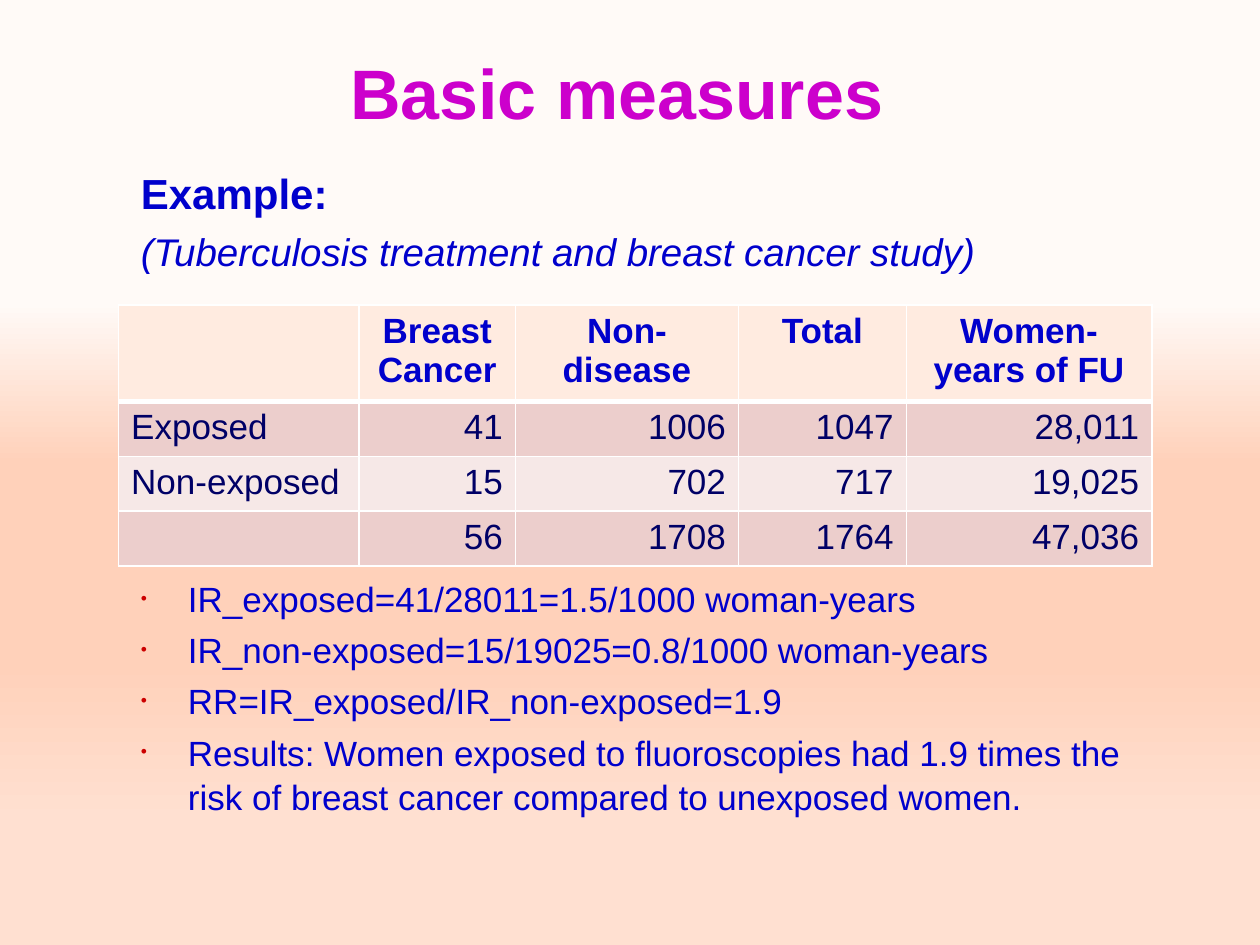
import pptx
import pptx.dml.color
import pptx.enum.text
import pptx.oxml
import pptx.oxml.ns
import pptx.util
from lxml import etree

Cm = pptx.util.Cm
Pt = pptx.util.Pt
ALIGN = pptx.enum.text.PP_ALIGN
qn = pptx.oxml.ns.qn

TITLE = "Basic measures"
INTRO = ["Example:", "(Tuberculosis treatment and breast cancer study)"]
HEADER = ["", "Breast Cancer", "Non-disease", "Total", "Women-years of FU"]
ROWS = [
    ["Exposed", "41", "1006", "1047", "28,011"],
    ["Non-exposed", "15", "702", "717", "19,025"],
    ["", "56", "1708", "1764", "47,036"],
]
FINDINGS = [
    "IR_exposed=41/28011=1.5/1000 woman-years",
    "IR_non-exposed=15/19025=0.8/1000 woman-years",
    "RR=IR_exposed/IR_non-exposed=1.9",
    "Results: Women exposed to fluoroscopies had 1.9 times the risk of "
    "breast cancer compared to unexposed women.",
]
COLUMN_WIDTHS = [4.85, 3.15, 4.5, 3.38, 4.95]
HEADER_HEIGHT, ROW_HEIGHT = 1.82, 1.04

THEME = {
    "font": "Arial",
    "title": ("CC00CC", 40),
    "example": ("0000CC", 24),
    "study": ("0000CC", 22),
    "body": ("0000CC", 20),
    "figures": ("000066", 20),
    "bullet": "CC0000",
    "border": "FFFFFF",
    "header_fill": "FFEBE0",
    "row_fills": ["ECCECC", "F6E8E7"],
    "background": [(32, "FFFAF7"), (49, "FFD1BA"), (70, "FFD1BA"), (87, "FFE0D1")],
}


def rgb(value):
    return pptx.dml.color.RGBColor.from_string(value)


def style(para, role, bold=False, italic=False, align=ALIGN.LEFT):
    color, size = THEME[role]
    para.alignment = align
    for font in [para.font] + [span.font for span in para.runs]:
        font.name = THEME["font"]
        font.size = Pt(size)
        font.bold = bold
        font.italic = italic
        font.color.rgb = rgb(color)


def add_text(page, lines, left, top, width, height):
    box = page.shapes.add_textbox(Cm(left), Cm(top), Cm(width), Cm(height))
    box.text_frame.word_wrap = True
    box.text_frame.text = "\n".join(lines)
    return box.text_frame


def space(paras, before):
    for index, para in enumerate(paras):
        para.line_spacing = 1.05
        para.space_before = Pt(before if index else 0)


def add_bullet(para):
    properties = para._p.get_or_add_pPr()
    properties.set("marL", str(Cm(0.95)))
    properties.set("indent", str(Cm(-0.95)))
    color = etree.SubElement(properties, qn("a:buClr"))
    etree.SubElement(color, qn("a:srgbClr"), val=THEME["bullet"])
    etree.SubElement(properties, qn("a:buSzPct"), val="50000")
    etree.SubElement(properties, qn("a:buFont"), typeface=THEME["font"])
    etree.SubElement(properties, qn("a:buChar"), char="•")


def add_borders(cell, top, bottom):
    properties = cell._tc.get_or_add_tcPr()
    for index, (side, width) in enumerate(zip("LRTB", (1, 1, top, bottom))):
        line = etree.Element(qn("a:ln" + side), w=str(Pt(width)))
        fill = etree.SubElement(line, qn("a:solidFill"))
        etree.SubElement(fill, qn("a:srgbClr"), val=THEME["border"])
        properties.insert(index, line)


def paint_background(page):
    fill = page.background.fill
    fill.gradient()
    fill.gradient_angle = 270
    stops = next(page._element.iter(qn("a:gsLst")))
    for stop in list(stops):
        stops.remove(stop)
    for position, color in THEME["background"]:
        stop = etree.SubElement(stops, qn("a:gs"), pos=str(position * 1000))
        etree.SubElement(stop, qn("a:srgbClr"), val=color)


def add_counts(page):
    rows = [HEADER] + ROWS
    height = HEADER_HEIGHT + ROW_HEIGHT * len(ROWS)
    table = page.shapes.add_table(
        len(rows), len(HEADER), Cm(2.39), Cm(6.15), Cm(sum(COLUMN_WIDTHS)), Cm(height)
    ).table
    for column, width in zip(table.columns, COLUMN_WIDTHS):
        column.width = Cm(width)
    for r, values in enumerate(rows):
        is_header = r == 0
        table.rows[r].height = Cm(HEADER_HEIGHT if is_header else ROW_HEIGHT)
        fill = THEME["header_fill"] if is_header else THEME["row_fills"][(r - 1) % 2]
        for c, value in enumerate(values):
            cell = table.cell(r, c)
            cell.text_frame.text = value
            cell.fill.solid()
            cell.fill.fore_color.rgb = rgb(fill)
            add_borders(cell, 3 if r == 1 else 1, 3 if is_header else 1)
            para = cell.text_frame.paragraphs[0]
            if is_header:
                style(para, "body", bold=True, align=ALIGN.CENTER)
            else:
                style(para, "figures", align=ALIGN.RIGHT if c else ALIGN.LEFT)


def main():
    deck = pptx.Presentation()
    deck.slide_width, deck.slide_height = Cm(25.4), Cm(19.05)
    page = deck.slides.add_slide(deck.slide_layouts[6])
    paint_background(page)

    title = add_text(page, [TITLE], 1, 0.74, 22.86, 2.2)
    title.vertical_anchor = pptx.enum.text.MSO_ANCHOR.MIDDLE
    style(title.paragraphs[0], "title", bold=True, align=ALIGN.CENTER)

    intro = add_text(page, INTRO, 2.59, 3.2, 21.51, 2.6).paragraphs
    space(intro, 4.4)
    style(intro[0], "example", bold=True)
    style(intro[1], "study", italic=True)

    add_counts(page)

    findings = add_text(page, FINDINGS, 2.59, 11.48, 21.51, 4.9).paragraphs
    space(findings, 4)
    for para in findings:
        add_bullet(para)
        style(para, "body")

    deck.save("out.pptx")


if __name__ == "__main__":
    main()
